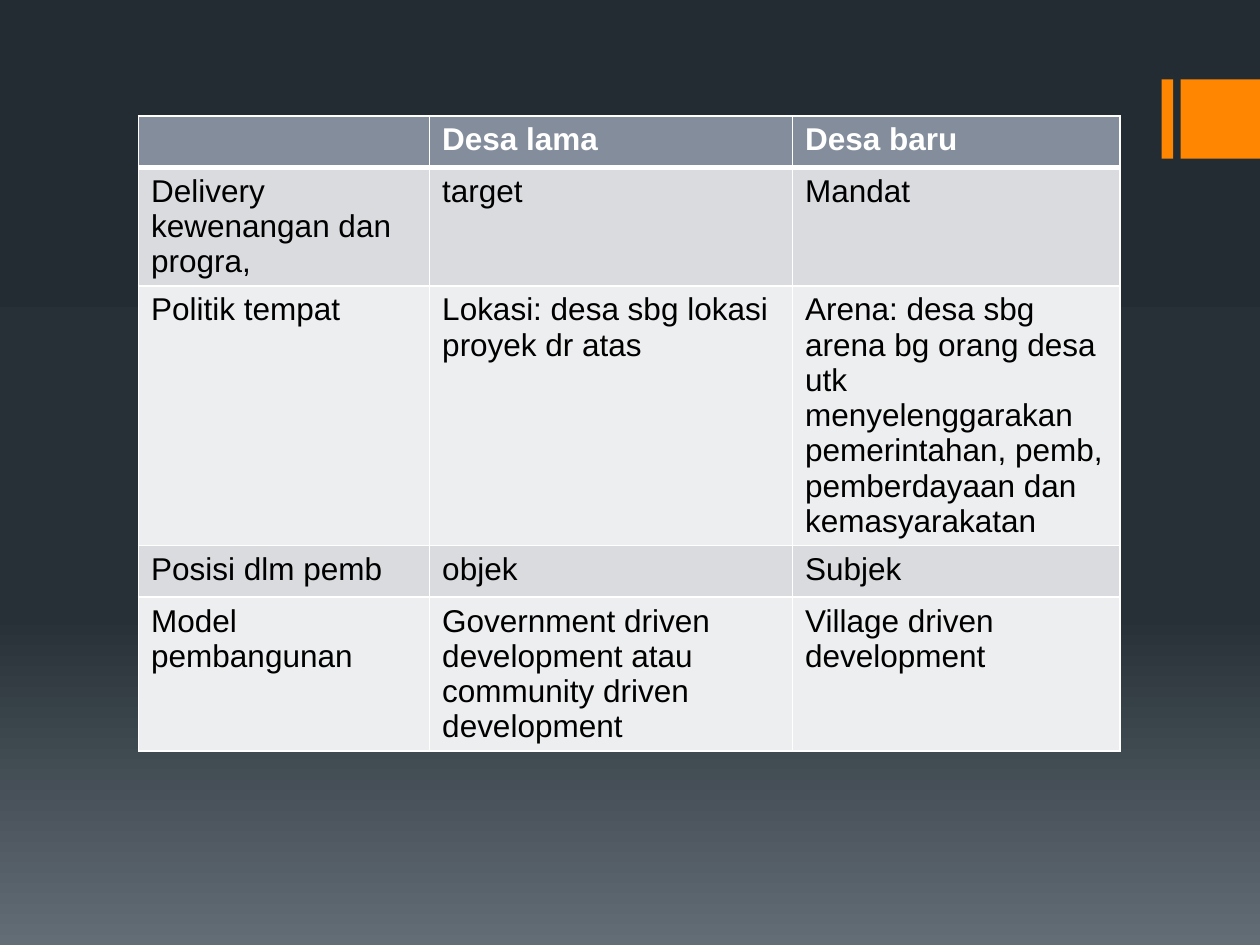
from copy import deepcopy

from lxml import etree
from pptx import Presentation
from pptx.dml.color import RGBColor
from pptx.enum.shapes import MSO_SHAPE
from pptx.oxml.ns import qn
from pptx.util import Inches, Pt

RECT = MSO_SHAPE.RECTANGLE
WHITE = RGBColor(0xFF, 0xFF, 0xFF)
BLACK = RGBColor(0, 0, 0)
ORANGE = RGBColor(0xFF, 0x86, 0x00)
HEADER = RGBColor(0x83, 0x8D, 0x9B)
BANDS = [RGBColor(0xD9, 0xDB, 0xDE), RGBColor(0xED, 0xEE, 0xEF)]
BACKGROUND = [
    (0, RGBColor(0x24, 0x2C, 0x33)),
    (0.65, RGBColor(0x27, 0x30, 0x37)),
    (1, RGBColor(0x63, 0x6D, 0x76)),
]
FONT = "Arial"

ROWS = [
    ("", "Desa lama", "Desa baru"),
    ("Delivery kewenangan dan progra,", "target", "Mandat"),
    ("Politik tempat", "Lokasi: desa sbg lokasi proyek dr atas",
     "Arena: desa sbg arena bg orang desa utk menyelenggarakan "
     "pemerintahan, pemb, pemberdayaan dan kemasyarakatan"),
    ("Posisi dlm pemb", "objek", "Subjek"),
    ("Model pembangunan",
     "Government driven development atau community driven development",
     "Village driven development"),
]
COL_WIDTHS = [2.31, 2.88, 2.6]
ROW_HEIGHT = 0.41
TABLE_LEFT, TABLE_TOP = 1.1, 0.92

ACCENT_TOP = ACCENT_HEIGHT = 0.63
ACCENTS = [(9.22, 0.09), (9.37, 0.63)]  # left, width


def paint_background(s):
    fill = s.background.fill
    fill.gradient()
    fill.gradient_angle = 270
    stop_list = s.element.find(".//" + qn("a:gsLst"))
    stop_list.append(deepcopy(stop_list[-1]))
    for stop, (position, color) in zip(fill.gradient_stops, BACKGROUND):
        stop.position = position
        stop.color.rgb = color


def set_borders(cell, bottom, top):
    """White cell borders; bottom and top are widths in points."""
    tc_pr = cell._tc.get_or_add_tcPr()
    sides = [("lnL", 1), ("lnR", 1), ("lnT", top), ("lnB", bottom)]
    for i, (side, width) in enumerate(sides):
        ln = etree.Element(qn("a:" + side), w=str(Pt(width)))
        solid = etree.SubElement(ln, qn("a:solidFill"))
        etree.SubElement(solid, qn("a:srgbClr"), val=str(WHITE))
        tc_pr.insert(i, ln)


def add_comparison(s):
    frame = s.shapes.add_table(
        len(ROWS), len(COL_WIDTHS), Inches(TABLE_LEFT), Inches(TABLE_TOP),
        Inches(sum(COL_WIDTHS)), Inches(ROW_HEIGHT * len(ROWS)))
    table = frame.table
    for column, width in zip(table.columns, COL_WIDTHS):
        column.width = Inches(width)
    for i, texts in enumerate(ROWS):
        table.rows[i].height = Inches(ROW_HEIGHT)
        is_header = i == 0
        for j, text in enumerate(texts):
            cell = table.cell(i, j)
            cell.fill.solid()
            cell.fill.fore_color.rgb = HEADER if is_header else BANDS[(i - 1) % 2]
            set_borders(cell, bottom=3 if is_header else 1, top=3 if i == 1 else 1)
            p = cell.text_frame.paragraphs[0]
            p.font.size = Pt(18)
            if text:
                r = p.add_run()
                r.text = text
                r.font.name = FONT
                r.font.size = Pt(18)
                r.font.bold = is_header
                r.font.color.rgb = WHITE if is_header else BLACK


prs = Presentation()
prs.slide_width, prs.slide_height = Inches(10), Inches(7.5)
s = prs.slides.add_slide(prs.slide_layouts[6])
paint_background(s)
for left, width in ACCENTS:
    sp = s.shapes.add_shape(RECT, Inches(left), Inches(ACCENT_TOP),
                            Inches(width), Inches(ACCENT_HEIGHT))
    sp.shadow.inherit = False
    sp.fill.solid()
    sp.fill.fore_color.rgb = ORANGE
    sp.line.fill.background()
add_comparison(s)
prs.save("out.pptx")
